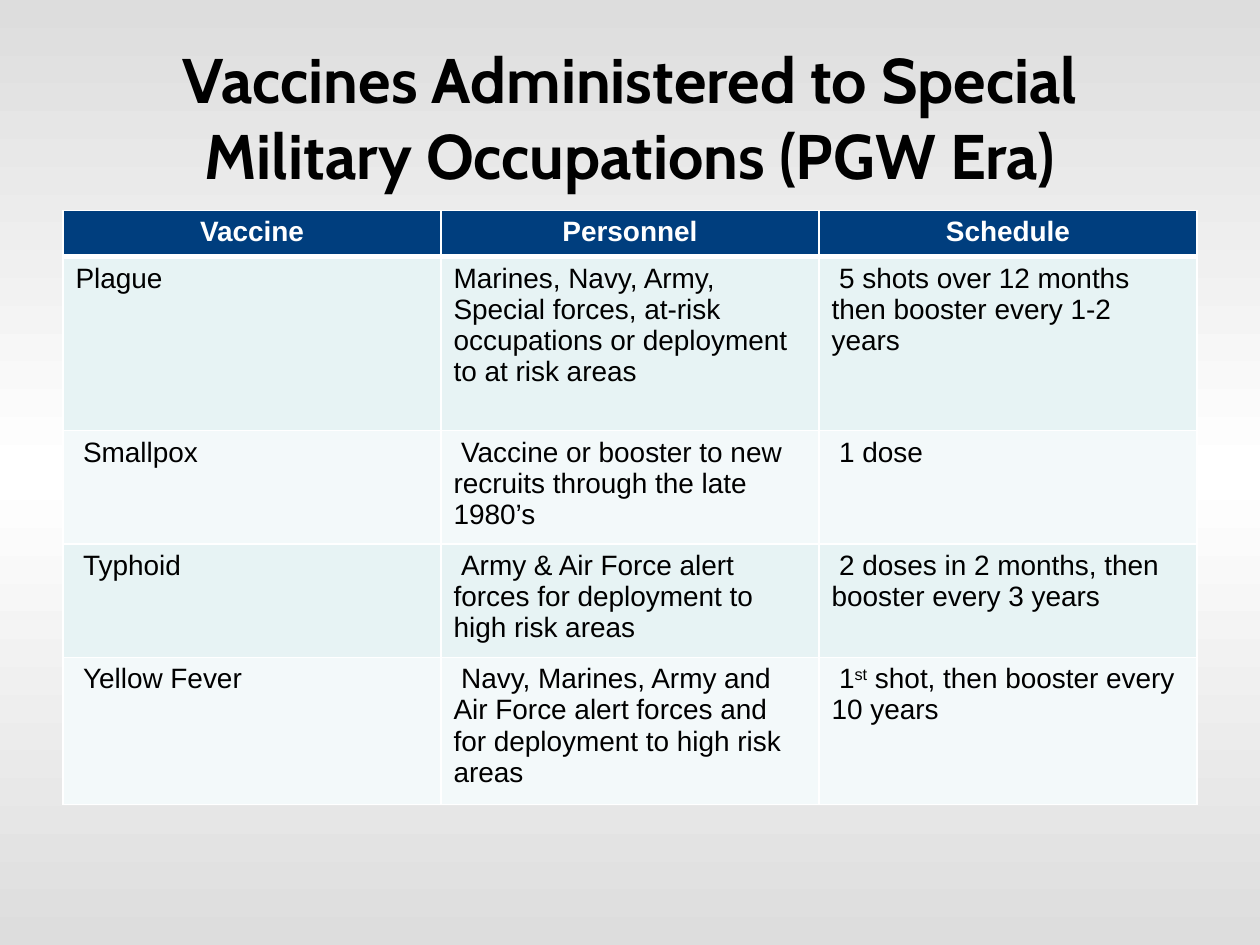
"""Build the slide on vaccines given to special military occupations."""
from copy import deepcopy
from dataclasses import dataclass

from pptx import Presentation
from pptx.dml.color import RGBColor
from pptx.enum.text import MSO_ANCHOR, PP_ALIGN
from pptx.oxml.ns import qn
from pptx.oxml.xmlchemy import OxmlElement
from pptx.slide import Slide
from pptx.table import _Cell
from pptx.util import Inches, Pt

CENTER, LEFT = PP_ALIGN.CENTER, PP_ALIGN.LEFT
MIDDLE = MSO_ANCHOR.MIDDLE


@dataclass(frozen=True)
class Theme:
    """Colours, fonts and sizes of the slide."""
    background: tuple = ("DDDDDD", "FFFFFF", "DDDDDD")
    text: str = "000000"
    header_text: str = "FFFFFF"
    header_fill: str = "003E7E"
    bands: tuple = ("E7F3F4", "F3F9FA")
    border: str = "FFFFFF"
    border_width: float = 1
    header_border_width: float = 3
    title_font: str = "Cabin"
    body_font: str = "Arial"
    title_size: float = 36
    body_size: float = 16
    first_line_indent: float = 0.06


@dataclass(frozen=True)
class Line:
    """One paragraph, given as alternating normal and superscript pieces."""
    pieces: tuple
    indented: bool = True


@dataclass(frozen=True)
class Look:
    """Appearance of one table row."""
    fill: str
    color: str
    bold: bool
    alignment: PP_ALIGN
    bottom_width: float


THEME = Theme()
SLIDE_WIDTH, SLIDE_HEIGHT = Inches(10), Inches(7.5)
MARGIN = 0.05
TITLE_TOP, TITLE_HEIGHT = 0.04, 1 / 6
TABLE_TOP = 1.67 / 7.5
ROW_HEIGHTS = (0.35, 1.38, 0.86, 0.86, 1.12)


def line(*pieces: str) -> Line:
    """Return a paragraph whose first line is indented."""
    return Line(pieces)


def flush(text: str) -> Line:
    """Return a paragraph without indent."""
    return Line((text,), indented=False)


TITLE = "Vaccines Administered to Special Military Occupations (PGW Era)"
ROWS = (
    ((flush("Vaccine"),), (flush("Personnel"),), (flush("Schedule"),)),
    ((flush("Plague"),),
     (flush("Marines, Navy, Army, Special forces, at-risk occupations "
            "or deployment to at risk areas"),),
     (line("5 shots over 12 months"), flush("then booster every 1-2 years"))),
    ((line("Smallpox"),),
     (line("Vaccine or booster to new recruits through the late 1980’s"),),
     (line("1 dose"),)),
    ((line("Typhoid"),),
     (line("Army & Air Force alert forces for deployment to high risk areas"),),
     (line("2 doses in 2 months, then booster every 3 years"),)),
    ((line("Yellow Fever"),),
     (line("Navy, Marines, Army and Air Force alert forces and for "
           "deployment to high risk areas"),),
     (line("1", "st", " shot, then booster every 10 years"),)),
)


def style_font(font, name: str, size: float, color: str, bold: bool) -> None:
    """Set typeface, size, colour and weight."""
    font.name, font.size, font.bold = name, Pt(size), bold
    font.color.rgb = RGBColor.from_string(color)


def paint_background(slide: Slide) -> None:
    """Fill the slide with an evenly spaced vertical gradient."""
    fill = slide.background.fill
    fill.gradient()
    fill.gradient_angle = 90
    stop_list = next(slide.element.iter(qn("a:gsLst")))
    stop_list.append(deepcopy(stop_list[0]))
    last = len(THEME.background) - 1
    for index, stop in enumerate(fill.gradient_stops):
        stop.position = index / last
        stop.color.rgb = RGBColor.from_string(THEME.background[index])


def add_title(slide: Slide) -> None:
    """Add the centred title."""
    box = slide.shapes.add_textbox(
        int(SLIDE_WIDTH * MARGIN), int(SLIDE_HEIGHT * TITLE_TOP),
        int(SLIDE_WIDTH * (1 - 2 * MARGIN)), int(SLIDE_HEIGHT * TITLE_HEIGHT))
    frame = box.text_frame
    frame.word_wrap = True
    frame.vertical_anchor = MIDDLE
    frame.text = TITLE
    paragraph = frame.paragraphs[0]
    paragraph.alignment = CENTER
    style_font(paragraph.runs[0].font, THEME.title_font, THEME.title_size,
               THEME.text, True)


def set_borders(cell: _Cell, bottom_width: float) -> None:
    """Draw the four borders of a cell ahead of its fill."""
    properties = cell._tc.get_or_add_tcPr()
    widths = {"a:lnL": THEME.border_width, "a:lnR": THEME.border_width,
              "a:lnT": THEME.border_width, "a:lnB": bottom_width}
    for index, (tag, width) in enumerate(widths.items()):
        border = OxmlElement(tag)
        border.set("w", str(Pt(width)))
        solid = OxmlElement("a:solidFill")
        color = OxmlElement("a:srgbClr")
        color.set("val", THEME.border)
        solid.append(color)
        border.append(solid)
        properties.insert(index, border)


def fill_cell(cell: _Cell, lines: tuple, look: Look) -> None:
    """Write and format the paragraphs of one cell."""
    frame = cell.text_frame
    for index, content in enumerate(lines):
        paragraph = frame.add_paragraph() if index else frame.paragraphs[0]
        paragraph.alignment = look.alignment
        if content.indented:
            paragraph._p.get_or_add_pPr().set(
                "indent", str(Inches(THEME.first_line_indent)))
        for position, piece in enumerate(content.pieces):
            run = paragraph.add_run()
            run.text = piece
            style_font(run.font, THEME.body_font, THEME.body_size,
                       look.color, look.bold)
            if position % 2:
                run._r.get_or_add_rPr().set("baseline", "30000")
    cell.fill.solid()
    cell.fill.fore_color.rgb = RGBColor.from_string(look.fill)
    set_borders(cell, look.bottom_width)


def row_look(index: int) -> Look:
    """Return the header look or the banded body look."""
    if index == 0:
        return Look(THEME.header_fill, THEME.header_text, True, CENTER,
                    THEME.header_border_width)
    band = THEME.bands[(index - 1) % len(THEME.bands)]
    return Look(band, THEME.text, False, LEFT, THEME.border_width)


def add_vaccine_table(slide: Slide) -> None:
    """Add the table of vaccines, personnel and schedules."""
    table = slide.shapes.add_table(
        len(ROWS), len(ROWS[0]),
        int(SLIDE_WIDTH * MARGIN), int(SLIDE_HEIGHT * TABLE_TOP),
        int(SLIDE_WIDTH * (1 - 2 * MARGIN)), Inches(sum(ROW_HEIGHTS))).table
    for index, (row, height) in enumerate(zip(ROWS, ROW_HEIGHTS)):
        table.rows[index].height = Inches(height)
        for column, lines in enumerate(row):
            fill_cell(table.cell(index, column), lines, row_look(index))


def main() -> None:
    """Build and save the presentation."""
    presentation = Presentation()
    presentation.slide_width, presentation.slide_height = SLIDE_WIDTH, SLIDE_HEIGHT
    slide = presentation.slides.add_slide(presentation.slide_layouts[6])
    paint_background(slide)
    add_title(slide)
    add_vaccine_table(slide)
    presentation.save("out.pptx")


if __name__ == "__main__":
    main()
